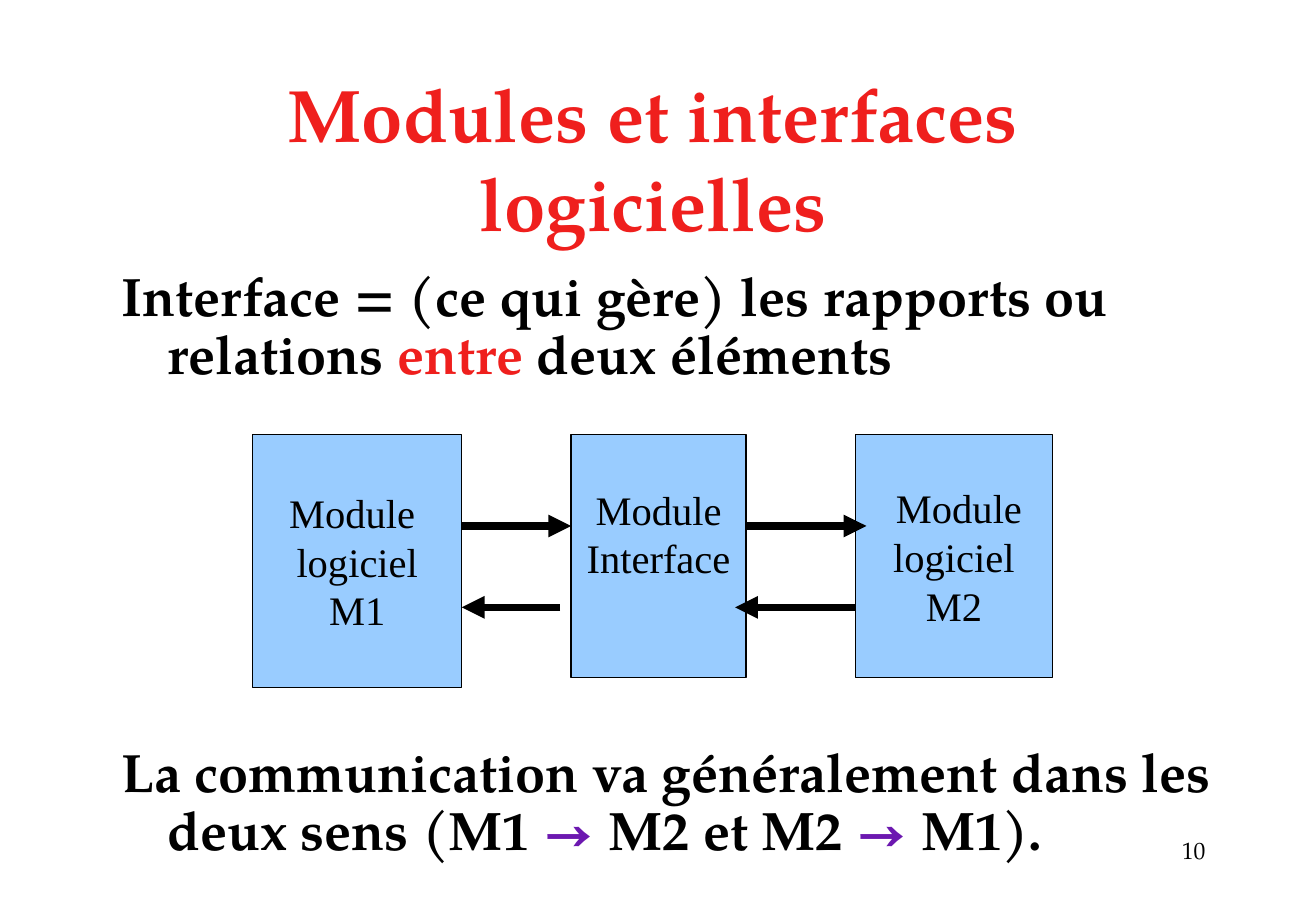
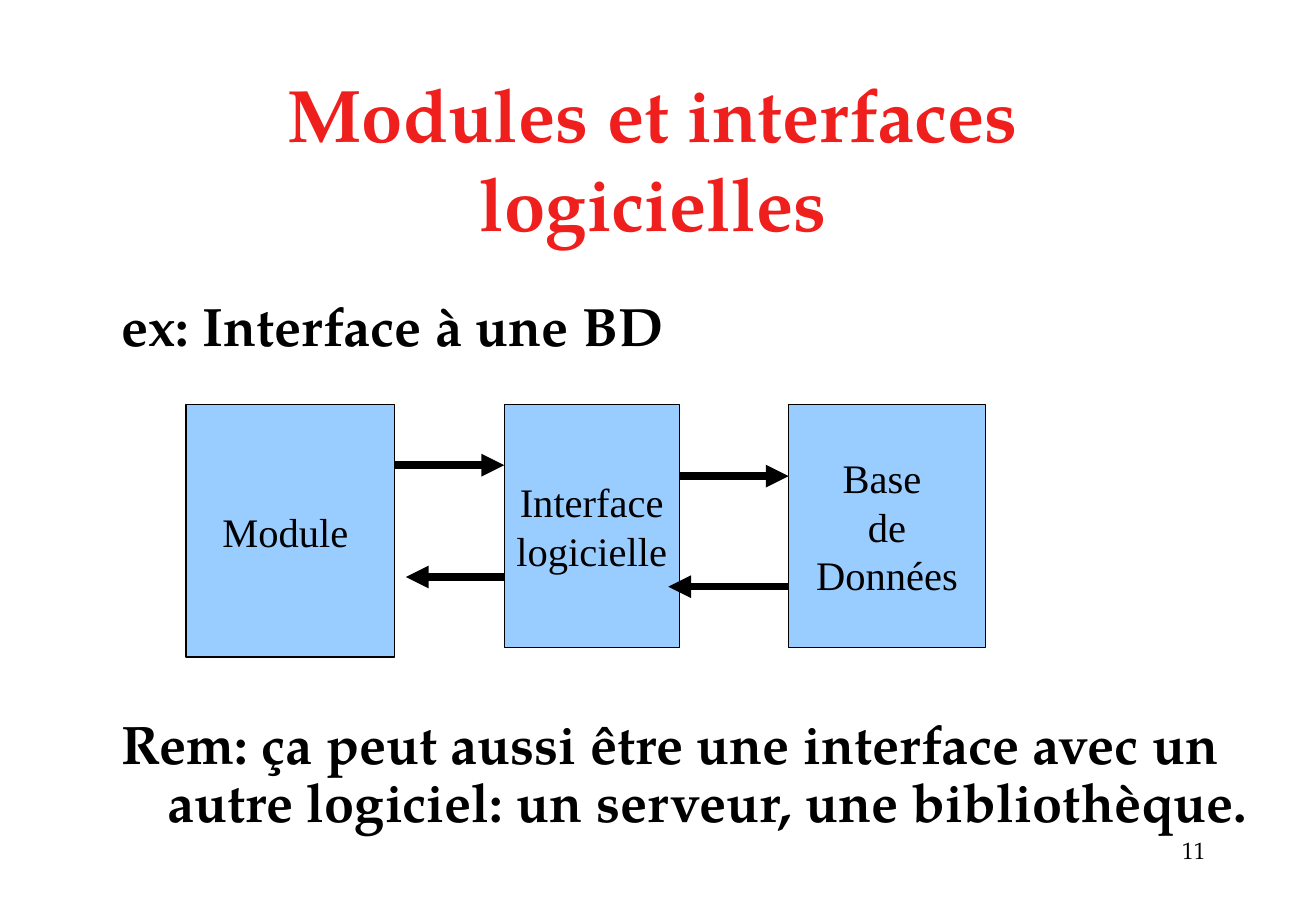
from lxml import etree
from pptx import Presentation
from pptx.dml.color import RGBColor
from pptx.enum.shapes import MSO_CONNECTOR, MSO_SHAPE
from pptx.enum.text import MSO_ANCHOR, MSO_AUTO_SIZE, PP_ALIGN
from pptx.oxml.ns import qn
from pptx.util import Inches, Pt

RECT, STRAIGHT = MSO_SHAPE.RECTANGLE, MSO_CONNECTOR.STRAIGHT
MIDDLE, NO_FIT = MSO_ANCHOR.MIDDLE, MSO_AUTO_SIZE.NONE
CENTER, RIGHT = PP_ALIGN.CENTER, PP_ALIGN.RIGHT
TITLE_ONLY = 5

SERIF, BOX_FONT = "TeX Gyre Pagella", "Times New Roman"
BLACK, RED, PURPLE, BLUE = "000000", "EF1F1D", "6C18B0", "99CCFF"

TITLE = "Modules et interfaces logicielles"
TITLE_BOX = (1.29, 0.67, 8.17, 1.25)
NUMBER_BOX = (7.76, 6.83, 2.26, 0.5)
BODY_LEFT, BODY_WIDTH, BODY_HEIGHT = 0.9, 9.93, 5.08
HANGING = 0.38
DIAGRAM_GAP = 210  # points left free between the two body paragraphs

BOX_SIZES = [(1.72, 2.08), (1.44, 2), (1.62, 2)]
BOX_GAP = 0.9
LINE_24 = 0.38  # height of one line of box text

# Arrows: gap number, points right, y from the box top, shift of start and end
SLIDES = [
    {
        "number": "10", "body_top": 2.17, "diagram": (2.08, 3.58),
        "body": [
            [("Interface = (ce qui gère) les rapports ou relations ", BLACK),
             ("entre", RED), (" deux éléments", BLACK)],
            [("La communication va généralement dans les deux sens (M1 ", BLACK),
             ("→", PURPLE), (" M2 et M2 ", BLACK), ("→", PURPLE), (" M1).", BLACK)],
        ],
        # Label and number of lines it is raised to make room for
        "boxes": [("Module \nlogiciel\nM1", 0), ("Module\nInterface", 1),
                  (" Module\nlogiciel\nM2", 0)],
        "arrows": [(0, True, 0.75, 0, 0), (1, True, 0.75, 0, 0.09),
                   (1, False, 1.42, 0, -0.09), (0, False, 1.42, -0.09, 0)],
    },
    {
        "number": "11", "body_top": 2.42, "diagram": (1.53, 3.33),
        "body": [
            [("ex: Interface à une BD", BLACK)],
            [("Rem: ça peut aussi être une interface avec un autre logiciel: "
              "un serveur, une bibliothèque.", BLACK)],
        ],
        "boxes": [("Module ", 0), ("Interface\nlogicielle", 0),
                  ("Base \nde\nDonnées", 0)],
        "arrows": [(0, True, 0.5, 0, 0), (1, True, 0.59, 0, 0),
                   (1, False, 1.5, 0, -0.09), (0, False, 1.42, 0, 0.09)],
    },
]


def rgb(color):
    return RGBColor.from_string(color)


def inches(values):
    return [Inches(v) for v in values]


def style(r, font, size, color=BLACK, bold=False):
    r.font.name, r.font.size, r.font.bold = font, Pt(size), bold
    r.font.color.rgb = rgb(color)


def add_title(s):
    sp = s.shapes.title
    sp.left, sp.top, sp.width, sp.height = inches(TITLE_BOX)
    tf = sp.text_frame
    tf.text = TITLE
    tf.word_wrap, tf.auto_size, tf.vertical_anchor = True, NO_FIT, MIDDLE
    p = tf.paragraphs[0]
    p.alignment, p.space_before, p.space_after = CENTER, Pt(12), Pt(3)
    style(p.runs[0], SERIF, 44, RED, True)


def add_number(s, number):
    tf = s.shapes.add_textbox(*inches(NUMBER_BOX)).text_frame
    tf.word_wrap = True
    tf.text = number
    p = tf.paragraphs[0]
    p.alignment = RIGHT
    style(p.runs[0], SERIF, 14)


def add_body(s, top, paragraphs):
    """Two hanging paragraphs, with room for the diagram between them."""
    box = (BODY_LEFT, top, BODY_WIDTH, BODY_HEIGHT)
    tf = s.shapes.add_textbox(*inches(box)).text_frame
    tf.word_wrap = True
    for i, parts in enumerate(paragraphs):
        p = tf.add_paragraph() if i else tf.paragraphs[0]
        p.line_spacing, p.space_after = 0.9, Pt(3)
        p.space_before = Pt(DIAGRAM_GAP if i else 12)
        pPr = p._p.get_or_add_pPr()
        pPr.set("marL", str(Inches(HANGING)))
        pPr.set("indent", str(-Inches(HANGING)))
        for text, color in parts:
            r = p.add_run()
            r.text = text
            style(r, SERIF, 32, color, True)


def add_box(s, box, label, raised):
    sp = s.shapes.add_shape(RECT, *inches(box))
    sp.shadow.inherit = False
    sp.fill.solid()
    sp.fill.fore_color.rgb = rgb(BLUE)
    sp.line.color.rgb, sp.line.width = rgb(BLACK), Pt(0.75)
    tf = sp.text_frame
    tf.text = label
    tf.word_wrap, tf.vertical_anchor = False, MIDDLE
    tf.margin_bottom = Inches(0.05 + raised * LINE_24)
    for p in tf.paragraphs:
        p.alignment = CENTER
        style(p.runs[0], BOX_FONT, 24)


def add_arrow(s, x1, x2, y):
    cn = s.shapes.add_connector(STRAIGHT, *inches((x1, y, x2, y)))
    cn.line.color.rgb, cn.line.width = rgb(BLACK), Pt(4.5)
    etree.SubElement(cn.line._get_or_add_ln(), qn("a:tailEnd"), type="triangle")
    etree.SubElement(cn._element.spPr, qn("a:effectLst"))


def add_diagram(s, left, top, boxes, arrows):
    """A row of boxes with arrows across the gaps."""
    gaps, x = [], left
    for (width, height), (label, raised) in zip(BOX_SIZES, boxes):
        add_box(s, (x, top, width, height), label, raised)
        gaps.append((x + width, x + width + BOX_GAP))
        x += width + BOX_GAP
    for gap, to_right, y, start_shift, end_shift in arrows:
        start, end = gaps[gap] if to_right else gaps[gap][::-1]
        add_arrow(s, start + start_shift, end + end_shift, top + y)


def main():
    prs = Presentation()
    prs.slide_width, prs.slide_height = inches((10.83, 7.5))
    for data in SLIDES:
        s = prs.slides.add_slide(prs.slide_layouts[TITLE_ONLY])
        add_number(s, data["number"])
        add_title(s)
        add_body(s, data["body_top"], data["body"])
        add_diagram(s, *data["diagram"], data["boxes"], data["arrows"])
    prs.save("out.pptx")


if __name__ == "__main__":
    main()
